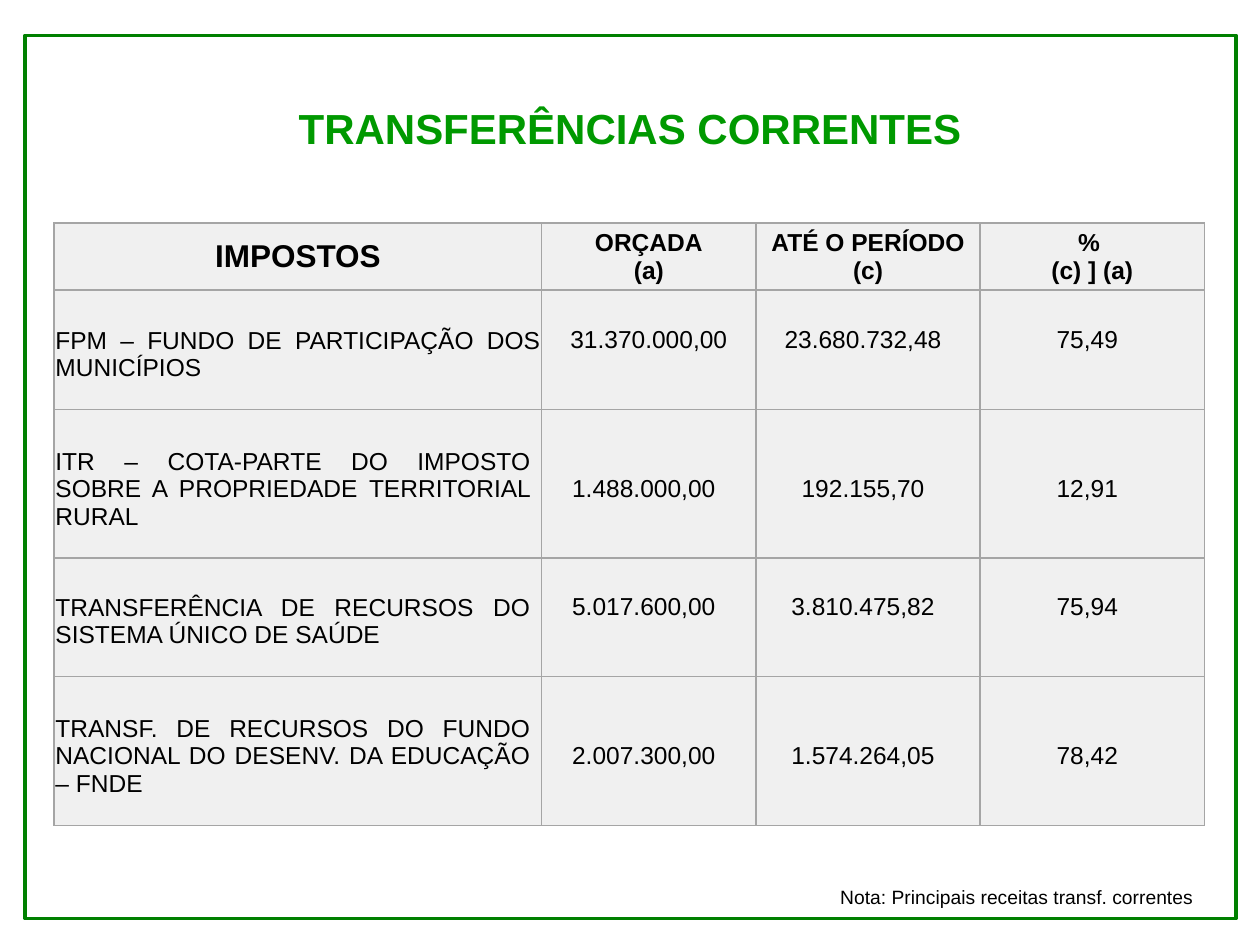
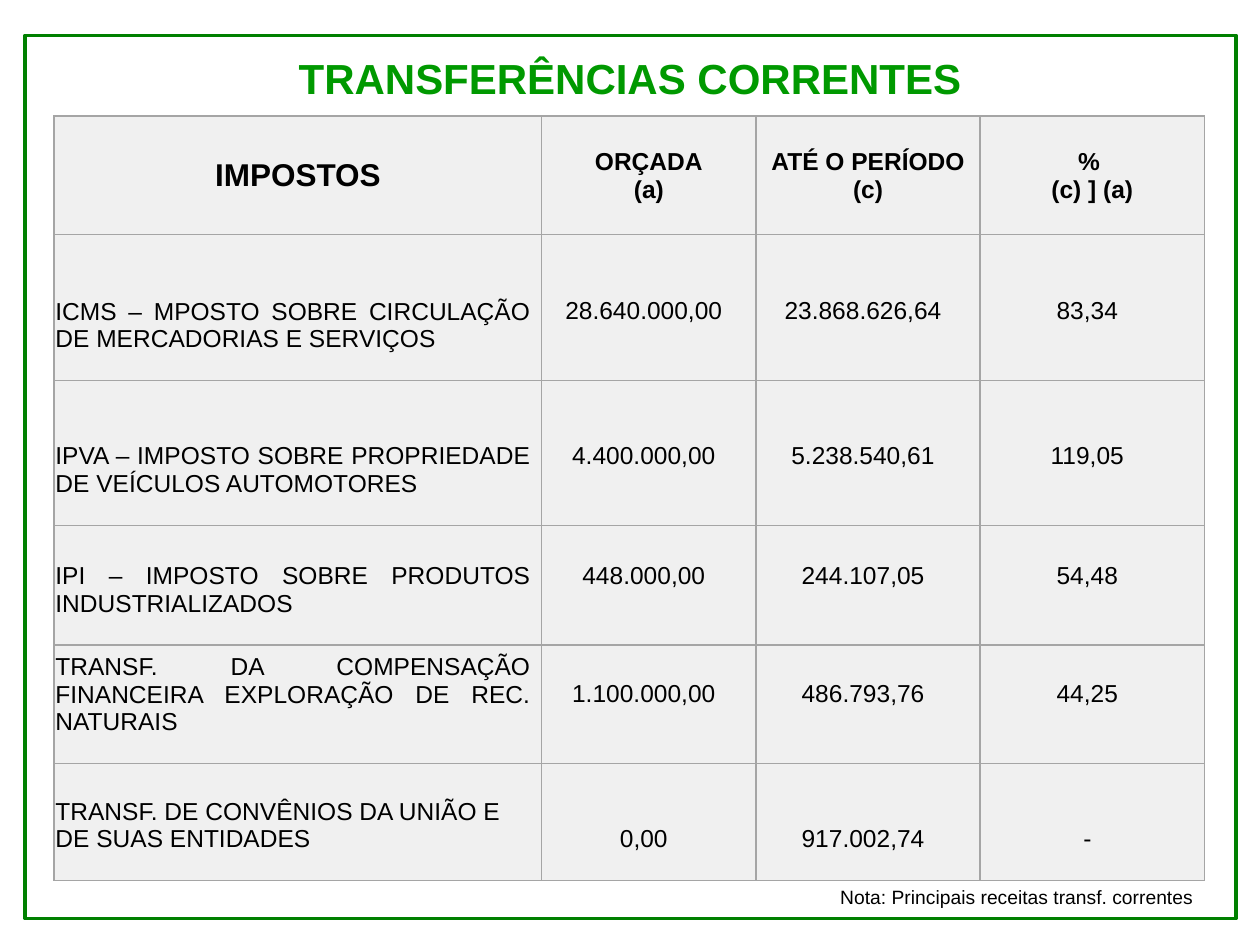
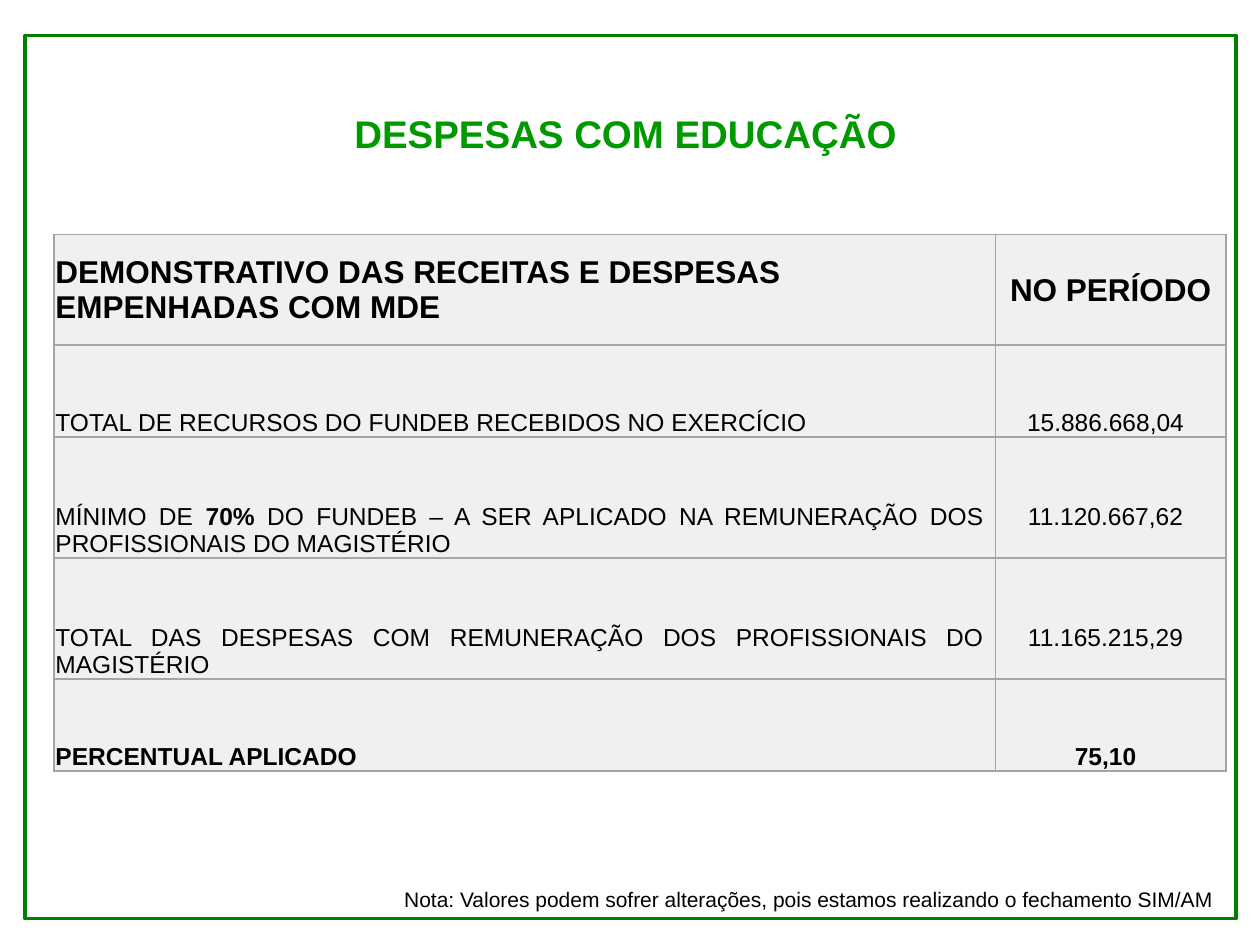
import lxml.etree
import pptx
import pptx.dml.color
import pptx.enum.shapes
import pptx.enum.text
import pptx.oxml.ns
import pptx.util

Inches = pptx.util.Inches
Pt = pptx.util.Pt
qn = pptx.oxml.ns.qn
Align = pptx.enum.text.PP_ALIGN
Anchor = pptx.enum.text.MSO_ANCHOR

LINE = 0.22  # height of one 14 pt line, in inches
COLS = [3.87, 1.7, 1.78, 1.78]
HEAD = ["IMPOSTOS", "ORÇADA\n(a)", "ATÉ O PERÍODO (c)", "% \n(c) ] (a)"]
NOTE = "Nota: Principais receitas transf. correntes"


def color(code):
    return pptx.dml.color.RGBColor.from_string(code)


def apply(item, values):
    for name, value in values.items():
        setattr(item, name, value)


class Deck:
    font = "Arial"
    ink = "000000"
    green = "009900"
    frame = "008000"
    rule = "A5A5A5"
    pale = "F0F0F0"

    def __init__(self):
        self.file = pptx.Presentation()
        apply(self.file, {"slide_width": Inches(10), "slide_height": Inches(7.5)})
        self.slide = None

    def start(self):
        """Add a slide with the green frame."""
        self.slide = self.file.slides.add_slide(self.file.slide_layouts[5])
        box = self.slide.shapes.add_shape(
            pptx.enum.shapes.MSO_SHAPE.RECTANGLE,
            Inches(0.2), Inches(0.28), Inches(9.61), Inches(7.01))
        box.shadow.inherit = False
        box.fill.background()
        box.line.color.rgb = color(self.frame)
        box.line.width = Pt(2)

    def label(self, frame, text, size, align=Align.LEFT, bold=False, ink=ink):
        """Fill a frame: newlines part paragraphs, asterisks toggle bold."""
        for row, line in enumerate(text.split("\n")):
            para = frame.add_paragraph() if row else frame.paragraphs[0]
            para.alignment = align
            for part, words in enumerate(line.split("*")):
                run = para.add_run()
                run.text = words
                apply(run.font, {"name": self.font, "size": Pt(size),
                                 "bold": bold or part % 2 == 1})
                run.font.color.rgb = color(ink)

    def title(self, text, left, top, width, height, size=24):
        shape = self.slide.shapes.title
        apply(shape, {"left": Inches(left), "top": Inches(top),
                      "width": Inches(width), "height": Inches(height)})
        apply(shape.text_frame, {"word_wrap": True, "vertical_anchor": Anchor.BOTTOM,
                                 "auto_size": pptx.enum.text.MSO_AUTO_SIZE.NONE})
        self.label(shape.text_frame, text, size, Align.CENTER, True, self.green)

    def note(self, text, left, top, width, size):
        box = self.slide.shapes.add_textbox(
            Inches(left), Inches(top), Inches(width), Inches(0.3))
        box.text_frame.word_wrap = True
        self.label(box.text_frame, text, size)

    def cell(self, cell, text, size, align, bold, anchor, right=0.01, drop=0):
        """Style a cell; drop is the number of lines left free at its foot."""
        apply(cell, {"margin_left": Inches(0.01), "margin_top": Inches(0.01),
                     "margin_right": Inches(right),
                     "margin_bottom": Inches(drop * LINE),
                     "vertical_anchor": anchor})
        props = cell._tc.get_or_add_tcPr()
        for side in "LRTB":
            edge = lxml.etree.SubElement(props, qn("a:ln" + side), w=str(Pt(1)))
            fill = lxml.etree.SubElement(edge, qn("a:solidFill"))
            lxml.etree.SubElement(fill, qn("a:srgbClr"), val=self.rule)
        cell.fill.solid()
        cell.fill.fore_color.rgb = color(self.pale)
        self.label(cell.text_frame, text, size, align, bold)

    def table(self, top, cols, highs, head, rows, foot=1):
        """Rows are (texts, options); foot is the free lines under labels."""
        shape = self.slide.shapes.add_table(
            len(highs), len(cols), Inches(0.43), Inches(top),
            Inches(sum(cols)), Inches(sum(highs)))
        grid = shape.table
        apply(grid, {"first_row": False, "horz_banding": False})
        for col, width in zip(grid.columns, cols):
            col.width = Inches(width)
        for row, high in zip(grid.rows, highs):
            row.height = Inches(high)
        wide = len(cols) == 2
        for col, text in enumerate(head):
            self.cell(grid.cell(0, col), text, 18 if wide or col == 0 else 14,
                      Align.LEFT if wide and col == 0 else Align.CENTER,
                      True, Anchor.MIDDLE)
        for row, (texts, opts) in enumerate(rows, 1):
            for col, text in enumerate(texts):
                align = Align.CENTER if col else opts.get("align", Align.JUSTIFY)
                right = 0.01 if col < opts.get("tight", 0) else 0.09
                drop = opts.get("drop", foot + 1) if col else foot
                self.cell(grid.cell(row, col), text, 14, align,
                          opts.get("bold", False), Anchor.BOTTOM, right, drop)


def main():
    deck = Deck()

    deck.start()
    deck.title("TRANSFERÊNCIAS CORRENTES", 2, 0.76, 6, 0.5)
    deck.table(1.77, COLS, [0.53, 0.95, 1.18, 0.94, 1.18], HEAD, [
        (["FPM – FUNDO DE PARTICIPAÇÃO DOS MUNICÍPIOS",
          "31.370.000,00", "23.680.732,48", "75,49"], {"tight": 2}),
        (["ITR – COTA-PARTE DO IMPOSTO SOBRE A PROPRIEDADE TERRITORIAL RURAL",
          "1.488.000,00", "192.155,70", "12,91"], {}),
        (["TRANSFERÊNCIA DE RECURSOS DO SISTEMA ÚNICO DE SAÚDE",
          "5.017.600,00", "3.810.475,82", "75,94"], {}),
        (["TRANSF. DE RECURSOS DO FUNDO NACIONAL DO DESENV. DA EDUCAÇÃO – FNDE",
          "2.007.300,00", "1.574.264,05", "78,42"], {}),
    ])
    deck.note(NOTE, 6.57, 6.98, 3.15, 11)

    deck.start()
    deck.title("TRANSFERÊNCIAS CORRENTES", 2, 0.37, 6, 0.5)
    deck.table(0.92, COLS, [0.94, 1.16, 1.15, 0.95, 0.94, 0.93], HEAD, [
        (["ICMS – MPOSTO SOBRE CIRCULAÇÃO DE MERCADORIAS E SERVIÇOS",
          "28.640.000,00", "23.868.626,64", "83,34"], {}),
        (["IPVA – IMPOSTO SOBRE PROPRIEDADE DE VEÍCULOS AUTOMOTORES",
          "4.400.000,00", "5.238.540,61", "119,05"], {}),
        (["IPI – IMPOSTO SOBRE PRODUTOS INDUSTRIALIZADOS",
          "448.000,00", "244.107,05", "54,48"], {}),
        (["TRANSF. DA COMPENSAÇÃO FINANCEIRA EXPLORAÇÃO DE REC. NATURAIS",
          "1.100.000,00", "486.793,76", "44,25"], {}),
        (["TRANSF. DE CONVÊNIOS DA UNIÃO E DE SUAS ENTIDADES",
          "0,00", "917.002,74", "-"], {"drop": 1, "align": Align.LEFT}),
    ])
    deck.note(NOTE, 6.57, 6.98, 3.15, 11)

    deck.start()
    deck.title("DESPESAS COM EDUCAÇÃO", 0.91, 0.52, 8.11, 0.77, 22)
    deck.table(1.86, [7.47, 1.83], [0.88, 0.73, 0.96, 0.96, 0.73],
               ["DEMONSTRATIVO DAS RECEITAS E DESPESAS EMPENHADAS COM MDE",
                "NO PERÍODO"], [
        (["TOTAL DE RECURSOS DO FUNDEB RECEBIDOS NO EXERCÍCIO",
          "15.886.668,04"], {"drop": 0}),
        (["MÍNIMO DE *70% *DO FUNDEB – A SER APLICADO NA REMUNERAÇÃO "
          "DOS PROFISSIONAIS DO MAGISTÉRIO", "11.120.667,62"], {}),
        (["TOTAL DAS DESPESAS COM REMUNERAÇÃO DOS PROFISSIONAIS DO MAGISTÉRIO",
          "11.165.215,29"], {}),
        (["PERCENTUAL APLICADO", "75,10"], {"drop": 0, "bold": True}),
    ], foot=0)
    deck.note("Nota: Valores podem sofrer alterações, pois estamos realizando "
              "o fechamento SIM/AM", 3.11, 6.99, 6.7, 12)

    deck.file.save("out.pptx")


if __name__ == "__main__":
    main()
